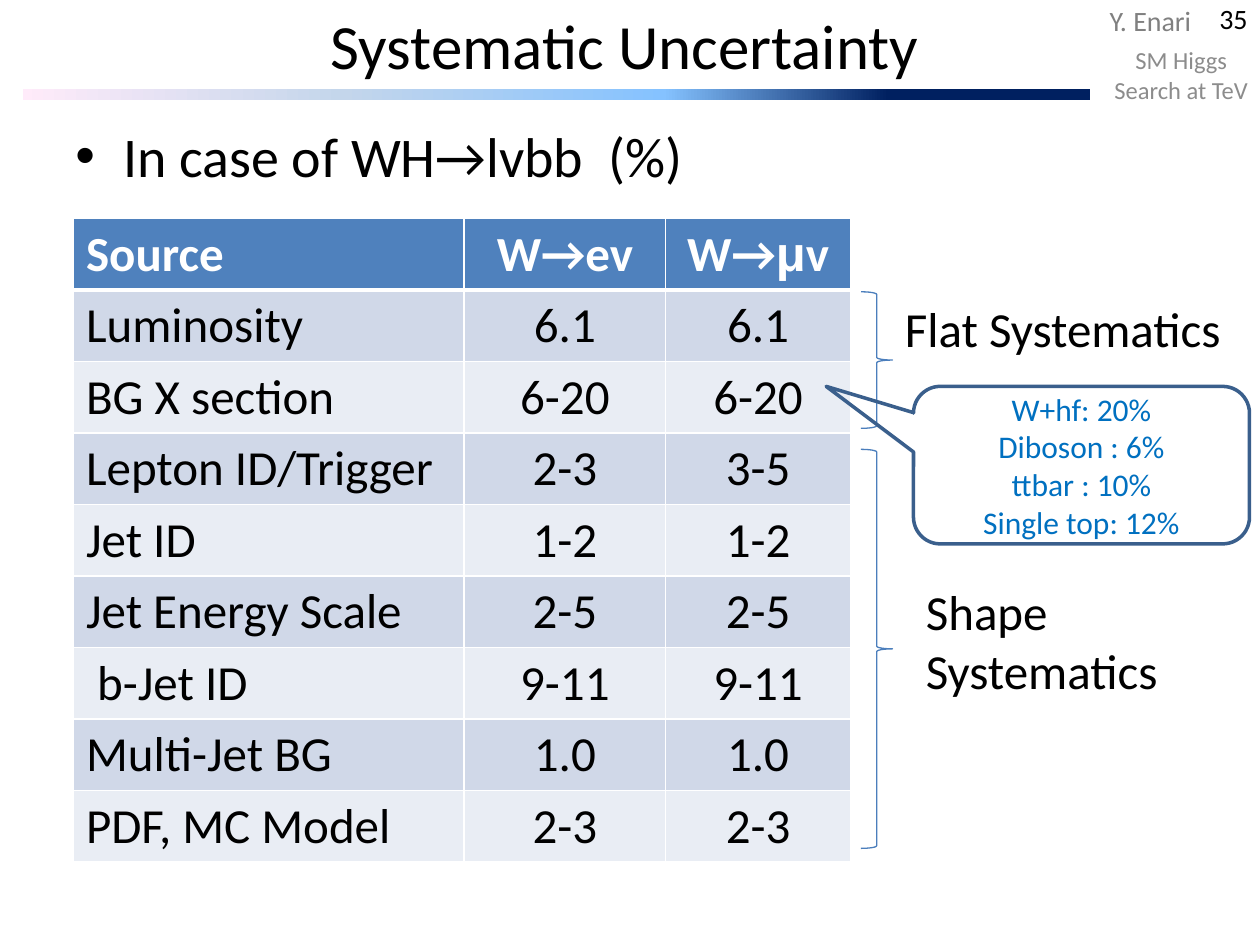
import itertools

import lxml.etree
import pptx
import pptx.dml.color
import pptx.enum.shapes
import pptx.enum.text
import pptx.oxml
import pptx.oxml.ns
import pptx.util

SHAPE = pptx.enum.shapes.MSO_SHAPE
ALIGN = pptx.enum.text.PP_ALIGN
ANCHOR = pptx.enum.text.MSO_ANCHOR
CELL = pptx.util.Inches(1) / 12
SLIDE_COLS, SLIDE_ROWS = 120, 90

UNCERTAINTIES = [
    ("Source", "W→ev", "W→μv"),
    ("Luminosity", "6.1", "6.1"),
    ("BG X section", "6-20", "6-20"),
    ("Lepton ID/Trigger", "2-3", "3-5"),
    ("Jet ID", "1-2", "1-2"),
    ("Jet Energy Scale", "2-5", "2-5"),
    (" b-Jet ID", "9-11", "9-11"),
    ("Multi-Jet BG", "1.0", "1.0"),
    ("PDF, MC Model", "2-3", "2-3"),
]
SOURCE_COLS = (37.2, 19.2, 17.6)
BAR_STOPS = [(0, "FFEBFA"), (30, "C4D6EB"), (60, "85C2FF"), (81, "002060"), (100, "002060")]


def grid(cells):
    return pptx.util.Emu(round(cells * CELL))


def place(box, col, row, cols, rows):
    return [grid(n) for n in (box[0] + col, box[1] + row, cols, rows)]


def color(hex_string):
    return pptx.dml.color.RGBColor.from_string(hex_string)


def add_element(parent, tag, **attributes):
    values = {name: str(value) for name, value in attributes.items()}
    return lxml.etree.SubElement(parent, pptx.oxml.ns.qn(tag), values)


def write(frame, text, size=28, ink="000000", bold=False, align=ALIGN.LEFT,
          anchor=ANCHOR.TOP, wrap=True, bullet=None):
    frame.word_wrap = wrap
    frame.vertical_anchor = anchor
    for index, line in enumerate(text.split("\n")):
        paragraph = frame.add_paragraph() if index else frame.paragraphs[0]
        paragraph.alignment = align
        if bullet:
            properties = paragraph._p.get_or_add_pPr()
            hanging = pptx.util.Inches(0.38)
            properties.set("marL", str(hanging))
            properties.set("indent", str(-hanging))
            add_element(properties, "a:buFont", typeface="Arial")
            add_element(properties, "a:buChar", char=bullet)
        for is_greek, letters in itertools.groupby(line, lambda letter: letter == "μ"):
            run = paragraph.add_run()
            run.text = "".join(letters)
            run.font.name = "Arial" if is_greek else "Calibri"
            run.font.size = pptx.util.Pt(size)
            run.font.bold = bold
            run.font.color.rgb = color(ink)


def add_text(slide, area, text, **text_format):
    write(slide.shapes.add_textbox(*area).text_frame, text, **text_format)


def add_outline(slide, preset, area, ink, width):
    outline = slide.shapes.add_shape(preset, *area)
    outline.shadow.inherit = False
    outline.fill.background()
    outline.line.color.rgb = color(ink)
    outline.line.width = pptx.util.Pt(width)
    return outline


def add_header(slide, box):
    bar = add_outline(slide, SHAPE.RECTANGLE, place(box, 2, 8.3, 102, 1.4), "FFFFFF", 2)
    bar.fill.gradient()
    bar.fill.gradient_angle = 0
    stops = bar._element.spPr.find(pptx.oxml.ns.qn("a:gradFill")).find(pptx.oxml.ns.qn("a:gsLst"))
    for stop in list(stops):
        stops.remove(stop)
    for percent, ink in BAR_STOPS:
        add_element(add_element(stops, "a:gs", pos=percent * 1000), "a:srgbClr", val=ink)

    add_text(slide, place(box, 104.5, -0.25, 10.3, 4.5), "Y. Enari",
             size=16, ink="808080", wrap=False)
    add_text(slide, place(box, 12.5, 0.5, 94, 7.5), "Systematic Uncertainty",
             size=36, align=ALIGN.CENTER, anchor=ANCHOR.MIDDLE)
    add_text(slide, place(box, 104, 4.3, 17, 5.6), "SM Higgs Search at TeV",
             size=14, ink="8C8C8C", align=ALIGN.CENTER, anchor=ANCHOR.MIDDLE)
    add_text(slide, place(box, 113, -0.25, 7, 4), "35",
             size=16, align=ALIGN.RIGHT, anchor=ANCHOR.MIDDLE)


def add_case(slide, box):
    add_text(slide, place(box, 0, 0, *box[2:]), "In case of WH→lvbb  (%)", size=32, bullet="•")


def add_borders(cell, bottom_width):
    properties = cell._tc.get_or_add_tcPr()
    for side, width in (("L", 1), ("R", 1), ("T", 1), ("B", bottom_width)):
        border = add_element(properties, f"a:ln{side}", w=pptx.util.Pt(width))
        add_element(add_element(border, "a:solidFill"), "a:srgbClr", val="FFFFFF")


def add_uncertainties(slide, box):
    frame = slide.shapes.add_table(len(UNCERTAINTIES), len(SOURCE_COLS),
                                   *place(box, 0, 0, *box[2:]))
    table = frame.table
    for column, cols in zip(table.columns, SOURCE_COLS):
        column.width = grid(cols)
    for row_index, values in enumerate(UNCERTAINTIES):
        table.rows[row_index].height = grid(box[3] / len(UNCERTAINTIES))
        is_header = row_index == 0
        band = "4F81BD" if is_header else ("E9EDF4", "D0D8E8")[row_index % 2]
        for col_index, value in enumerate(values):
            cell = table.cell(row_index, col_index)
            add_borders(cell, 3 if is_header else 1)
            cell.fill.solid()
            cell.fill.fore_color.rgb = color(band)
            write(cell.text_frame, value, bold=is_header,
                  ink="FFFFFF" if is_header else "000000",
                  align=ALIGN.CENTER if col_index else ALIGN.LEFT)


def add_groups(slide, box):
    for row, rows in ((0, 13), (15, 38)):
        brace = add_outline(slide, SHAPE.LEFT_BRACE, place(box, 0, row, 3, rows), "4B7EBC", 0.75)
        brace._element.spPr.xfrm.set("flipH", "1")
    add_text(slide, place(box, 3, 0, 32.9, 6.8), "Flat Systematics", wrap=False)
    add_text(slide, place(box, 5, 27, 35, 12.5), "Shape Systematics")

    sections = add_outline(slide, SHAPE.ROUNDED_RECTANGULAR_CALLOUT,
                           place(box, 5, 9, 32, 15), "3A5F8C", 2)
    for index, share in enumerate((-0.76, -0.5, 0.17)):
        sections.adjustments[index] = share
    write(sections.text_frame, "W+hf: 20%\nDiboson : 6%\nttbar : 10%\nSingle top: 12%",
          size=18, ink="0070C0", align=ALIGN.CENTER, anchor=ANCHOR.MIDDLE)


def main():
    deck = pptx.Presentation()
    deck.slide_width = grid(SLIDE_COLS)
    deck.slide_height = grid(SLIDE_ROWS)
    slide = deck.slides.add_slide(deck.slide_layouts[6])
    add_header(slide, (0, 0, SLIDE_COLS, 10))
    add_case(slide, (6, 11, 108, 75))
    add_uncertainties(slide, (7, 20.8, sum(SOURCE_COLS), 61.2))
    add_groups(slide, (82, 27.8, 38, 53))
    deck.save("out.pptx")


if __name__ == "__main__":
    main()
